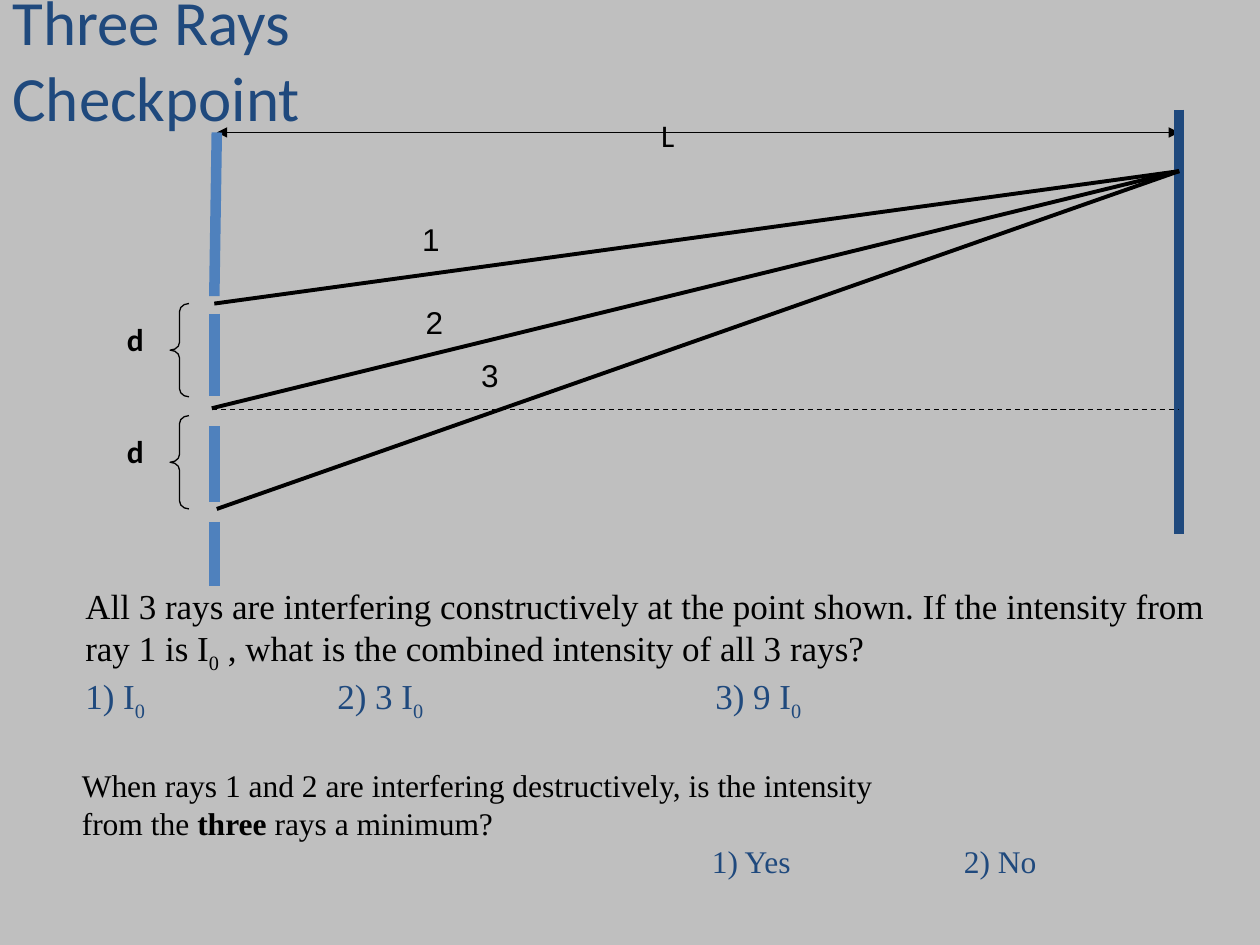
from dataclasses import dataclass, field

from lxml.etree import SubElement
from pptx import Presentation
from pptx.dml.color import RGBColor
from pptx.enum.dml import MSO_LINE
from pptx.enum.shapes import MSO_CONNECTOR, MSO_SHAPE
from pptx.enum.text import MSO_ANCHOR
from pptx.oxml.ns import qn
from pptx.util import Cm, Pt

BLACK, NAVY, BLUE, GRAY = "000000", "1F497D", "4F81BD", "BFBFBF"


@dataclass
class Line:
    x1: float
    y1: float
    x2: float
    y2: float
    color: str = BLACK
    width: float = 0.75
    dashed: bool = False
    arrows: bool = False


@dataclass
class Run:
    text: str
    fmt: dict = field(default_factory=dict)
    sub: bool = False
    new_line: bool = False


@dataclass
class Para:
    runs: list[Run]
    color: str = BLACK
    tabs: tuple[float, ...] = ()


@dataclass
class Text:
    box: tuple[float, float, float, float]
    paras: list[Para]
    font: str = "Calibri"
    size: float = 18
    anchor: MSO_ANCHOR = MSO_ANCHOR.TOP


def rgb(color: str) -> RGBColor:
    return RGBColor.from_string(color)


def draw_line(slide, line: Line) -> None:
    ends = map(Cm, (line.x1, line.y1, line.x2, line.y2))
    sp = slide.shapes.add_connector(MSO_CONNECTOR.STRAIGHT, *ends)
    sp.line.color.rgb = rgb(line.color)
    sp.line.width = Pt(line.width)
    if line.dashed:
        sp.line.dash_style = MSO_LINE.DASH
    if line.arrows:
        for end in ("a:headEnd", "a:tailEnd"):
            SubElement(sp.line._get_or_add_ln(), qn(end), type="triangle")
    SubElement(sp._element.spPr, qn("a:effectLst"))


def draw_brace(slide, x: float, y: float, w: float, h: float) -> None:
    sp = slide.shapes.add_shape(MSO_SHAPE.LEFT_BRACE, *map(Cm, (x, y, w, h)))
    sp.adjustments[0] = 0.42
    sp.shadow.inherit = False
    sp.fill.background()
    sp.line.color.rgb = rgb(BLACK)
    sp.line.width = Pt(0.75)


def draw_text(slide, text: Text) -> None:
    tf = slide.shapes.add_textbox(*map(Cm, text.box)).text_frame
    tf.word_wrap = True
    tf.vertical_anchor = text.anchor
    for i, para in enumerate(text.paras):
        p = tf.add_paragraph() if i else tf.paragraphs[0]
        if para.tabs:
            tab_list = SubElement(p._p.get_or_add_pPr(), qn("a:tabLst"))
            for pos in para.tabs:
                SubElement(tab_list, qn("a:tab"), pos=str(Cm(pos)), algn="l")
        for run in para.runs:
            if run.new_line:
                p.add_line_break()
            r = p.add_run()
            r.text = run.text
            fmt = {"name": text.font, "size": Pt(text.size)} | run.fmt
            for name, value in fmt.items():
                setattr(r.font, name, value)
            r.font.color.rgb = rgb(para.color)
            if run.sub:
                r._r.get_or_add_rPr().set("baseline", "-25000")


def label(x: float, y: float, w: float, text: str, font: str = "Calibri",
          **fmt) -> Text:
    return Text((x, y, w, 1.27), [Para([Run(text, fmt)])], font)


SUB_0 = Run("0", sub=True)
SERIF = "Times New Roman"
WALL_X, SCREEN_X = 4.32, 23.77
TARGET_Y = 3.45

# Slits, rays and screen
WALL = [Line(4.37, 2.67, WALL_X, 5.97, BLUE, 6)] + [
    Line(WALL_X, top, WALL_X, bottom, BLUE, 6)
    for top, bottom in ((6.32, 7.98), (8.59, 10.11), (10.52, 11.81))
]
RAYS = [
    Line(x, y, SCREEN_X, TARGET_Y, width=2.25)
    for x, y in ((4.32, 6.12), (4.27, 8.23), (4.37, 10.26))
]
LINES = [
    Line(4.37, 2.67, SCREEN_X, 2.67, arrows=True),
    *WALL,
    Line(SCREEN_X, 2.21, SCREEN_X, 10.77, NAVY, 6),
    Line(4.27, 8.26, 23.75, 8.26, dashed=True),
    *RAYS,
]
BRACE_TOPS = (6.12, 8.38)

# Title, labels and questions
TEXTS = [
    Text((0, -0.41, 25.4, 3.18),
         [Para([Run("Three Rays"), Run("Checkpoint", new_line=True)], NAVY)],
         size=36, anchor=MSO_ANCHOR.MIDDLE),
    label(13.08, 2.21, 1.02, "L"),
    *(label(2.31, top + 0.21, 1.5, "d", bold=True) for top in BRACE_TOPS),
    label(8.26, 4.32, 1.09, "1", "Arial"),
    label(8.33, 5.99, 1.09, "2", "Arial"),
    label(9.45, 7.06, 1.09, "3", "Arial"),
    Text((1.47, 11.66, 23.93, 2.82), [
        Para([Run("All 3 rays are interfering constructively at the point "
                  "shown. If the intensity from ray 1 is I"), SUB_0,
              Run(" , what is the combined intensity of all 3 rays?")]),
        Para([Run("1) I"), SUB_0, Run("\t2) 3 I"), SUB_0,
              Run("\t3) 9 I"), SUB_0], NAVY, (5.08, 12.7)),
    ], SERIF, 20),
    Text((1.4, 15.32, 23.37, 3.3), [
        Para([Run("When rays 1 and 2 are interfering destructively, "
                  "is the intensity")]),
        Para([Run("from the "), Run("three", {"bold": True}),
              Run(" rays a minimum?")]),
        Para([Run("\t1) Yes\t2) No")], NAVY, (12.7, 17.78)),
    ], SERIF),
]


def main() -> None:
    prs = Presentation()
    prs.slide_width, prs.slide_height = Cm(25.4), Cm(19.05)
    s = prs.slides.add_slide(prs.slide_layouts[6])
    s.background.fill.solid()
    s.background.fill.fore_color.rgb = rgb(GRAY)
    for line in LINES:
        draw_line(s, line)
    for top in BRACE_TOPS:
        draw_brace(s, 3.43, top, 0.38, 1.88)
    for text in TEXTS:
        draw_text(s, text)
    prs.save("out.pptx")


if __name__ == "__main__":
    main()
